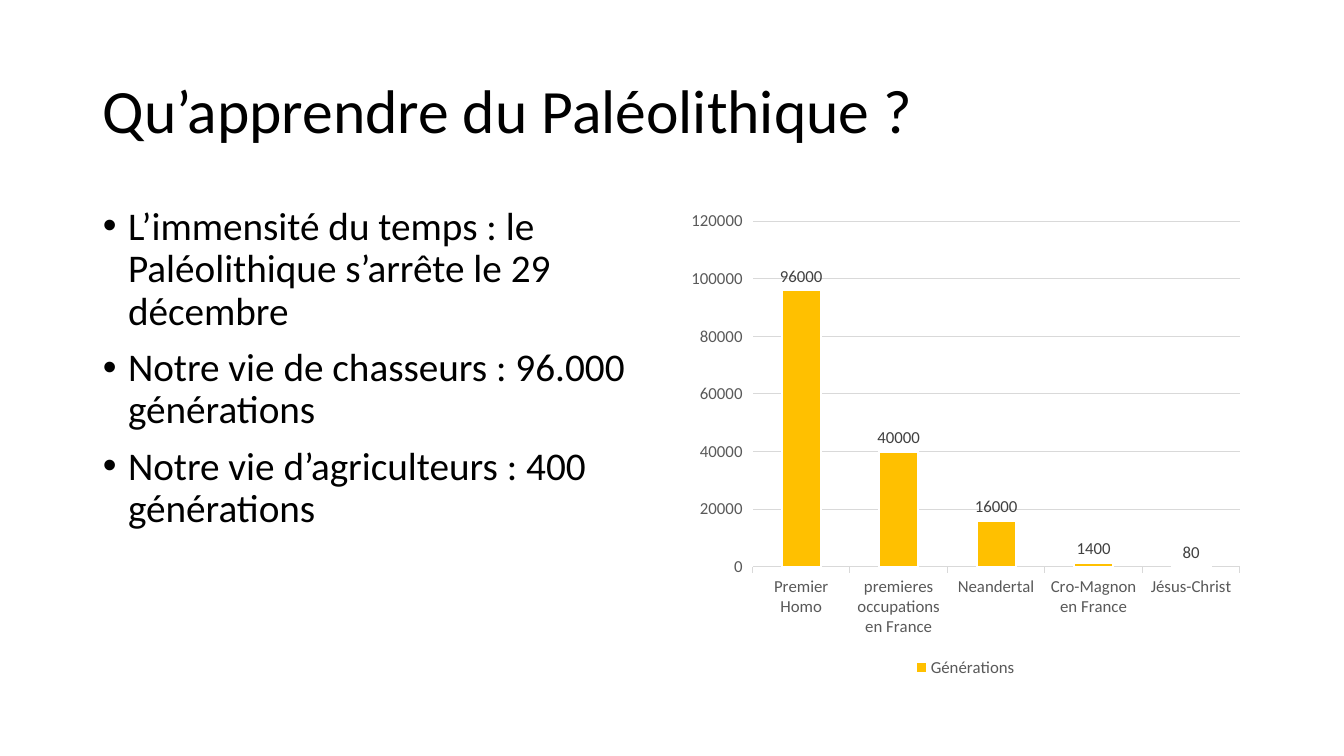
from dataclasses import dataclass
from lxml import etree
from pptx import Presentation
from pptx import util as u
from pptx.chart.data import CategoryChartData
from pptx.dml.color import RGBColor
from pptx.enum import chart as ch, text
from pptx.oxml.ns import qn

TITLE = "Qu’apprendre du Paléolithique ?"
LESSONS = [
    "L’immensité du temps : le Paléolithique s’arrête le 29 décembre",
    "Notre vie de chasseurs : 96.000 générations",
    "Notre vie d’agriculteurs : 400 générations",
]
SERIES = "Générations"
GENERATIONS = {
    "Premier Homo": 96000,
    "premieres occupations en France": 40000,
    "Neandertal": 16000,
    "Cro-Magnon en France": 1400,
    "Jésus-Christ": 80,
}


@dataclass(frozen=True)
class Theme:
    font: str = "Calibri"
    ink: str = "000000"
    axis: str = "595959"
    label: str = "404040"
    rule: str = "D9D9D9"
    bar: str = "FFC000"
    edge: str = "FFFFFF"
    title_size: int = 44
    body_size: int = 28
    chart_size: int = 12


THEME = Theme()
WIDTH, HEIGHT = 13.33, 7.5
MARGIN, GUTTER = 0.92, 0.16
TITLE_TOP, TITLE_HEIGHT = 0.4, 1.45
BODY_TOP, BODY_HEIGHT = 2, 4.76
CONTENT = WIDTH - 2 * MARGIN
COLUMN = (CONTENT - GUTTER) / 2


def set_all(obj, values):
    for name, value in values.items():
        setattr(obj, name, value)


def box(left, top, width, height):
    return [u.Inches(v) for v in (left, top, width, height)]


def place(sp, frame, anchor):
    set_all(sp, dict(zip(("left", "top", "width", "height"), frame)))
    set_all(sp.text_frame, {
        "word_wrap": True,
        "auto_size": text.MSO_AUTO_SIZE.NONE,
        "vertical_anchor": anchor,
    })


def style_font(font, size, color):
    set_all(font, {"name": THEME.font, "size": u.Pt(size), "bold": False})
    font.color.rgb = RGBColor.from_string(color)


def style_line(line, color, width):
    line.color.rgb = RGBColor.from_string(color)
    line.width = u.Pt(width)


def write(p, words, size, before):
    set_all(p, {"alignment": text.PP_ALIGN.LEFT, "line_spacing": 0.9,
                "space_before": u.Pt(before)})
    r = p.add_run()
    r.text = words
    style_font(r.font, size, THEME.ink)


def add_bullet(p):
    props = p._p.get_or_add_pPr()
    props.set("marL", str(u.Inches(0.25)))
    props.set("indent", str(-u.Inches(0.25)))
    etree.SubElement(props, qn("a:buFont")).set("typeface", "Arial")
    etree.SubElement(props, qn("a:buChar")).set("char", "•")


def add_generations_chart(s, frame):
    data = CategoryChartData()
    data.categories = list(GENERATIONS)
    data.add_series(SERIES, list(GENERATIONS.values()))
    chart = s.shapes.add_chart(ch.XL_CHART_TYPE.COLUMN_CLUSTERED, *frame, data).chart
    set_all(chart, {"has_title": False, "has_legend": True})
    style_font(chart.font, THEME.chart_size, THEME.axis)
    set_all(chart.legend, {"position": ch.XL_LEGEND_POSITION.BOTTOM,
                           "include_in_layout": False})

    cat, val = chart.category_axis, chart.value_axis
    for axis in (cat, val):
        style_font(axis.tick_labels.font, THEME.chart_size, THEME.axis)
    style_font(chart.legend.font, THEME.chart_size, THEME.axis)
    cat.major_tick_mark = ch.XL_TICK_MARK.OUTSIDE
    style_line(cat.format.line, THEME.rule, 0.75)
    val.major_tick_mark = ch.XL_TICK_MARK.OUTSIDE
    val.format.line.fill.background()
    style_line(val.major_gridlines.format.line, THEME.rule, 0.75)

    plot = chart.plots[0]
    set_all(plot, {"gap_width": 150, "vary_by_categories": False})
    bars = plot.series[0]
    bars.format.fill.solid()
    bars.format.fill.fore_color.rgb = RGBColor.from_string(THEME.bar)
    style_line(bars.format.line, THEME.edge, 1.5)
    labels = bars.data_labels
    set_all(labels, {"show_value": True,
                     "position": ch.XL_LABEL_POSITION.OUTSIDE_END})
    style_font(labels.font, THEME.chart_size, THEME.label)


def main():
    prs = Presentation()
    prs.slide_width, prs.slide_height = u.Inches(WIDTH), u.Inches(HEIGHT)
    s = prs.slides.add_slide(prs.slide_layouts[1])
    title, body = s.shapes.title, s.placeholders[1]

    place(title, box(MARGIN, TITLE_TOP, CONTENT, TITLE_HEIGHT), text.MSO_ANCHOR.MIDDLE)
    write(title.text_frame.paragraphs[0], TITLE, THEME.title_size, 0)

    place(body, box(MARGIN, BODY_TOP, COLUMN, BODY_HEIGHT), text.MSO_ANCHOR.TOP)
    tf = body.text_frame
    for i, lesson in enumerate(LESSONS):
        p = tf.add_paragraph() if i else tf.paragraphs[0]
        write(p, lesson, THEME.body_size, 10)
        add_bullet(p)

    chart_left = MARGIN + COLUMN + GUTTER
    add_generations_chart(s, box(chart_left, BODY_TOP, COLUMN, BODY_HEIGHT))
    prs.save("out.pptx")


if __name__ == "__main__":
    main()
